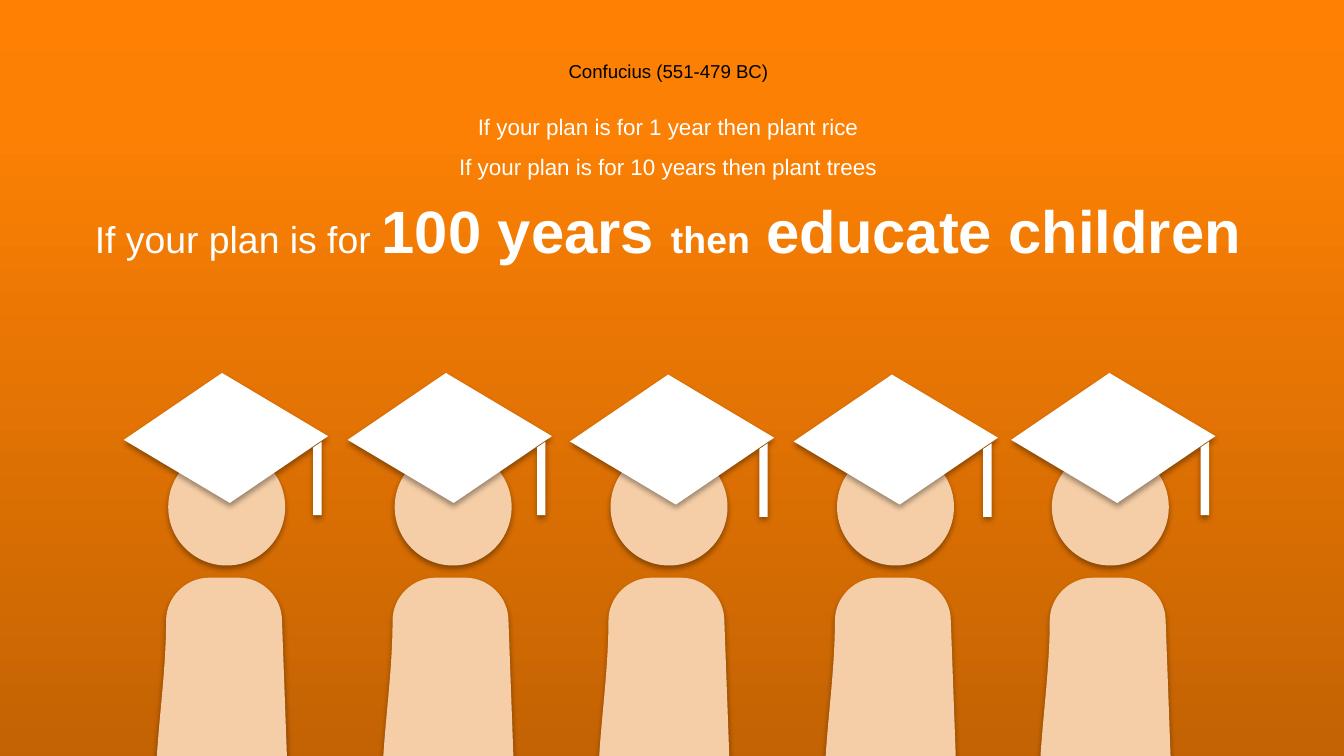
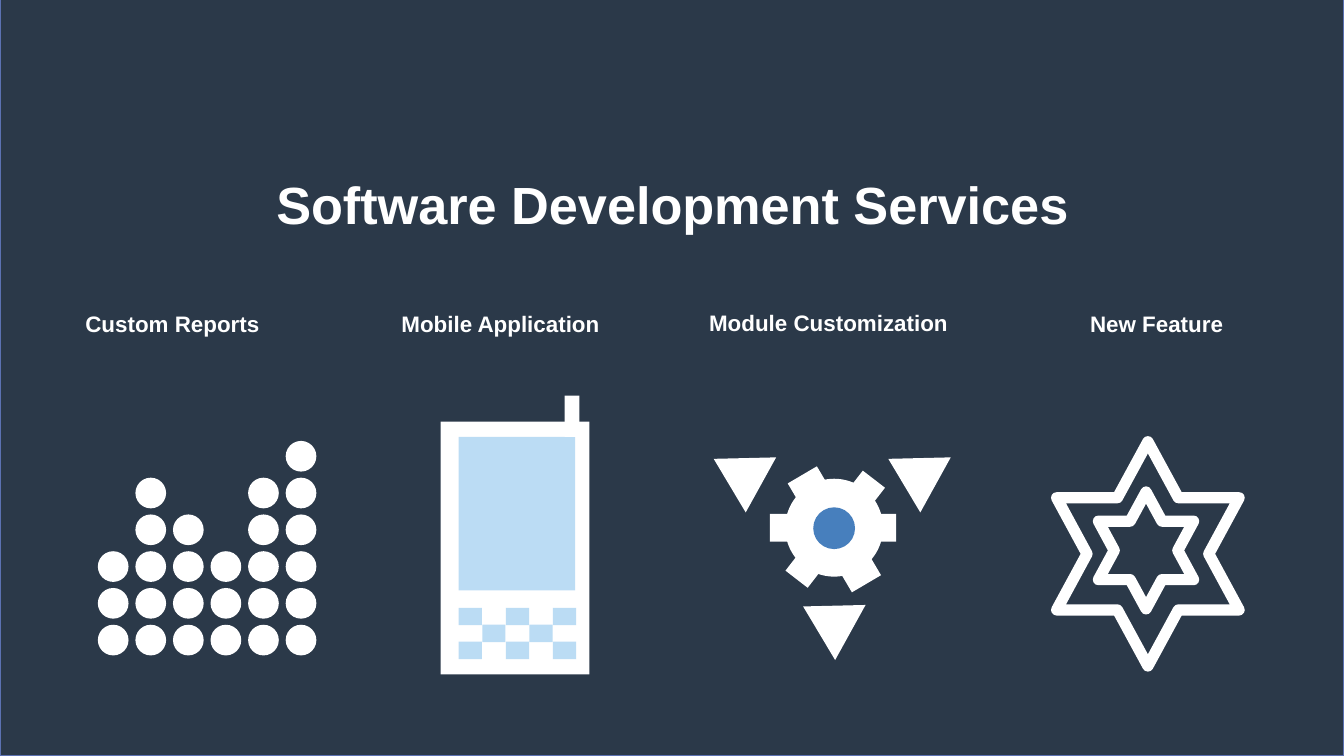
from copy import deepcopy

from lxml import etree
from pptx import Presentation
from pptx.dml.color import RGBColor
from pptx.enum import shapes as sh, text as tx
from pptx.oxml import ns
from pptx.util import Cm, Pt

WHITE = RGBColor(0xFF, 0xFF, 0xFF)
BLACK = RGBColor(0, 0, 0)
SKIN = RGBColor(0xF5, 0xCE, 0xA7)
ORANGE_EDGE = RGBColor(0xE6, 0x81, 0x1C)
ORANGES = [(0, RGBColor(0xC2, 0x62, 0x03)), (0.8, RGBColor(0xFB, 0x80, 0x04)),
           (1, RGBColor(0xFF, 0x80, 0x02))]
NAVY = RGBColor(0x2B, 0x39, 0x49)
NAVY_EDGE = RGBColor(0x5C, 0x72, 0xB2)
PALE_BLUE = RGBColor(0xBB, 0xDC, 0xF4)
HUB_BLUE = RGBColor(0x47, 0x7F, 0xBD)
FONT = "Arial"
SHAPE = sh.MSO_SHAPE

# Slide 1, lengths in centimetres
AUTHOR = "Confucius (551-479 BC)"
SHORT_PLANS = ["If your plan is for 1 year then plant rice",
               "If your plan is for 10 years then plant trees"]
LONG_PLAN = [("If your plan is for ", 20, False), ("100 years ", 32, True),
             ("then", 20, True), (" educate children", 32, True)]
STUDENT_LEFTS = [2.94, 7.22, 11.3, 15.58, 19.64]
CAP_CENTRES = [(4.27, 8.28), (8.5, 8.28), (12.7, 8.31), (16.93, 8.31), (21.04, 8.28)]
CAP_BOARD = [(-0.89, -0.85), (1.39, -1.34), (0.89, 0.85), (-1.39, 1.34)]
TASSEL = [(1.65, 0.18), (1.81, 0.07), (1.81, 1.46), (1.65, 1.46)]
# One point is a straight line, three points are a Bezier curve
TORSO_START = (0.2, 0.81)
TORSO = [
    [(0.2, 0.38), (0.56, 0), (1.02, 0)],
    [(1.57, 0)],
    [(2.03, 0), (2.39, 0.38), (2.39, 0.81)],
    [(2.51, 4.11)],
    [(2.51, 4.57), (2.03, 4.95), (1.57, 4.95)],
    [(1.02, 4.95)],
    [(0.56, 4.95), (0, 4.55), (0, 4.11)],
    [(0, 3), (0.2, 1.93), (0.2, 0.81)],
]

# Slide 2
SERVICES_TITLE = "Software Development Services"
SERVICES = [("Custom Reports", 5.74), ("Mobile Application", 5.74),
            ("Module Customization", 5.72), ("New Feature", 5.74)]
DOTS_PER_COLUMN = [3, 5, 4, 3, 5, 6]
PHONE = [((8.33, 7.97, 2.81, 4.78), WHITE), ((8.67, 8.26, 2.2, 2.9), PALE_BLUE),
         ((10.67, 7.48, 0.28, 0.78), WHITE)]
STARS = [(19.97, 8.35, 3.45, 4.24), (20.76, 9.3, 1.8, 2.21)]
GEAR = [(SHAPE.DONUT, (14.84, 9.05, 1.85, 1.85), 0, WHITE),
        (SHAPE.RECTANGLE, (15.45, 8.81, 0.64, 2.39), 329.5, WHITE),
        (SHAPE.RECTANGLE, (15.48, 8.78, 0.53, 2.39), 270, WHITE),
        (SHAPE.RECTANGLE, (15.52, 8.81, 0.53, 2.39), 37.7, WHITE),
        (SHAPE.OVAL, (15.37, 9.59, 0.79, 0.79), 0, HUB_BLUE)]
ARROW_CORNERS = [(13.34, 8.41), (16.64, 8.41), (15.03, 11.2)]


def add_shadow(shape):
    effects = shape.element.spPr.find(ns.qn("a:effectLst"))
    shadow = etree.SubElement(effects, ns.qn("a:outerShdw"), blurRad=str(Pt(3.1)),
                              dist=str(Pt(1.8)), dir="5400000", rotWithShape="0")
    colour = etree.SubElement(shadow, ns.qn("a:srgbClr"), val="000000")
    etree.SubElement(colour, ns.qn("a:alpha"), val="35000")


def paint(shape, fill=None, edge=None, edge_width=0.75, shadow=False):
    shape.shadow.inherit = False
    if fill is None:
        shape.fill.background()
    else:
        shape.fill.solid()
        shape.fill.fore_color.rgb = fill
    if edge is None:
        shape.line.fill.background()
    else:
        shape.line.color.rgb = edge
        shape.line.width = Pt(edge_width)
    if shadow:
        add_shadow(shape)
    return shape


def add_preset(shapes, kind, box, rotation=0, **look):
    shape = shapes.add_shape(kind, *map(Cm, box))
    shape.rotation = rotation
    return paint(shape, **look)


def add_outline(shapes, points, left, top, **look):
    (x, y), *rest = [(Cm(left + dx), Cm(top + dy)) for dx, dy in points]
    builder = shapes.build_freeform(x, y)
    builder.add_line_segments(rest, close=True)
    return paint(builder.convert_to_shape(), **look)


def add_torso(shapes, left, top):
    """Outline the corner points, then bend the sides that have controls."""
    corners = [TORSO_START] + [segment[-1] for segment in TORSO]
    torso = add_outline(shapes, corners, left, top, fill=SKIN, shadow=True)
    sides = list(torso.element.spPr.iter(ns.qn("a:lnTo")))
    for side, segment in zip(sides, TORSO):
        if len(segment) == 3:
            curve = etree.Element(ns.qn("a:cubicBezTo"))
            for x, y in segment:
                etree.SubElement(curve, ns.qn("a:pt"), x=str(Cm(x)), y=str(Cm(y)))
            side.getparent().replace(side, curve)


def add_backdrop(slide, box, fill, edge):
    """Put a full-slide panel behind everything else."""
    panel = add_preset(slide.shapes, SHAPE.RECTANGLE, box, fill=fill, edge=edge, shadow=True)
    panel.element.getparent().insert(2, panel.element)
    return panel


def apply_gradient(shape, stops, angle):
    shape.fill.gradient()
    shape.fill.gradient_angle = angle
    stop_list = shape.element.spPr.find(".//" + ns.qn("a:gsLst"))
    while len(stop_list) < len(stops):
        stop_list.append(deepcopy(stop_list[0]))
    for stop, (position, colour) in zip(shape.fill.gradient_stops, stops):
        stop.position = position
        stop.color.rgb = colour


def place(holder, box, wrap=True):
    holder.left, holder.top, holder.width, holder.height = map(Cm, box)
    frame = holder.text_frame
    frame.word_wrap = wrap
    frame.auto_size = tx.MSO_AUTO_SIZE.SHAPE_TO_FIT_TEXT
    frame.vertical_anchor = tx.MSO_ANCHOR.TOP
    return frame


def style(paragraph, size=None, bold=False, colour=WHITE, spacing=1.0):
    paragraph.alignment = tx.PP_ALIGN.CENTER
    paragraph.line_spacing = spacing
    paragraph.space_before = Pt(0)
    font = paragraph.font
    font.name, font.bold, font.color.rgb = FONT, bold, colour
    if size:
        font.size = Pt(size)


def add_label(slide, words, box, **look):
    frame = place(slide.shapes.add_textbox(0, 0, 0, 0), box)
    frame.text = words
    style(frame.paragraphs[0], **look)


def fill_plan_title(slide):
    sentence = place(slide.shapes.title, (-0.4, 3.54, 26.06, 1.63)).paragraphs[0]
    style(sentence)
    for words, size, bold in LONG_PLAN:
        run = sentence.add_run()
        run.text = words
        run.font.size, run.font.bold = Pt(size), bold


def fill_short_plans(slide):
    frame = place(slide.placeholders[1], (-0.4, 1.75, 26.06, 1.75))
    frame.text = "\n".join(SHORT_PLANS)
    for plan in frame.paragraphs:
        props = plan._p.get_or_add_pPr()
        props.set("marL", "0")
        props.set("indent", "0")
        etree.SubElement(props, ns.qn("a:buNone"))
        style(plan, 12, spacing=1.5)


def build_education(deck):
    slide = deck.slides.add_slide(deck.slide_layouts[1])
    panel = add_backdrop(slide, (-0.4, -0.56, 26.06, 15.21), ORANGES[0][1], ORANGE_EDGE)
    apply_gradient(panel, ORANGES, 90)
    add_label(slide, AUTHOR, (-0.4, 1, 26.06, 0.69), size=10, colour=BLACK)
    fill_plan_title(slide)
    fill_short_plans(slide)
    for left in STUDENT_LEFTS:
        student = slide.shapes.add_group_shape().shapes
        add_preset(student, SHAPE.OVAL, (left + 0.24, 8.48, 2.21, 2.21), fill=SKIN, shadow=True)
        add_torso(student, left, 10.92)
    for x, y in CAP_CENTRES:
        cap = slide.shapes.add_group_shape().shapes
        board = add_outline(cap, CAP_BOARD, x, y, fill=WHITE, shadow=True)
        board.rotation = 42.9
        add_outline(cap, TASSEL, x, y, fill=WHITE, shadow=True)


def draw_phone(slide):
    phone = slide.shapes.add_group_shape().shapes
    for box, colour in PHONE:
        add_preset(phone, SHAPE.RECTANGLE, box, fill=colour)
    for row in range(3):
        for column in range(row % 2, 5, 2):
            key = (8.67 + 0.445 * column, 11.49 + 0.32 * row, 0.44, 0.33)
            add_preset(phone, SHAPE.RECTANGLE, key, fill=PALE_BLUE)


def draw_dot_chart(slide):
    dots = slide.shapes.add_group_shape().shapes
    for column, count in enumerate(DOTS_PER_COLUMN):
        for level in range(count):
            dot = (1.85 + 0.71 * column, 11.81 - 0.695 * level, 0.58, 0.58)
            add_preset(dots, SHAPE.OVAL, dot, fill=WHITE)


def draw_stars(slide):
    stars = slide.shapes.add_group_shape().shapes
    for box in STARS:
        add_preset(stars, SHAPE.STAR_6_POINT, box, edge=WHITE, edge_width=6)


def draw_gear(slide):
    gear = slide.shapes.add_group_shape().shapes
    for kind, box, rotation, colour in GEAR:
        add_preset(gear, kind, box, rotation, fill=colour)
    for corner in ARROW_CORNERS:
        add_preset(gear, SHAPE.ISOSCELES_TRIANGLE, (*corner, 1.19, 1.02), 298.9, fill=WHITE)


def build_services(deck):
    slide = deck.slides.add_slide(deck.slide_layouts[5])
    add_backdrop(slide, (0, -0.2, 25.4, 14.48), NAVY, NAVY_EDGE)
    heading = place(slide.shapes.title, (4.88, 3.12, 15.65, 1.45), wrap=False)
    heading.text = SERVICES_TITLE
    style(heading.paragraphs[0], 28, bold=True)
    for index, (service, top) in enumerate(SERVICES):
        add_label(slide, service, (0.57 + 6.2 * index, top, 5.38, 0.76), size=12, bold=True)
    draw_phone(slide)
    draw_dot_chart(slide)
    draw_stars(slide)
    draw_gear(slide)


def main():
    deck = Presentation()
    deck.slide_width, deck.slide_height = Cm(25.4), Cm(14.29)
    build_education(deck)
    build_services(deck)
    deck.save("out.pptx")


if __name__ == "__main__":
    main()
